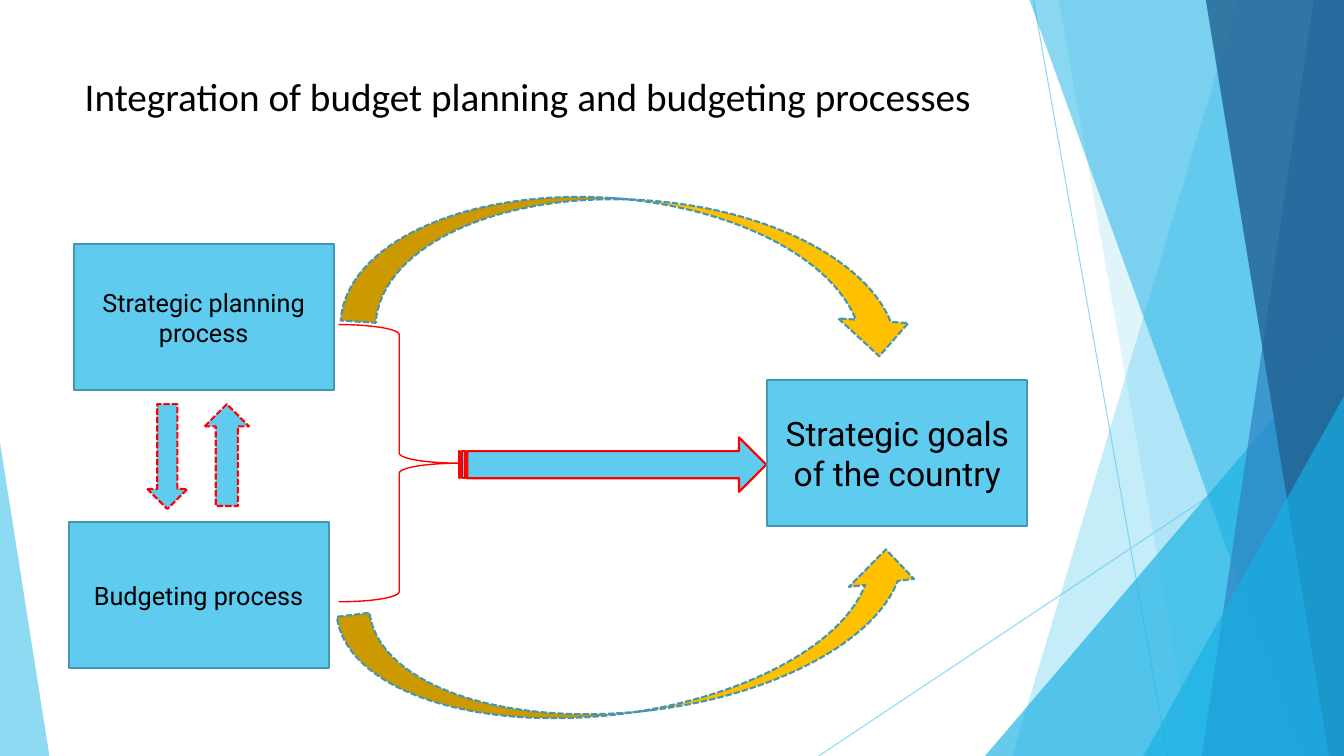
import pptx
import pptx.dml.color
import pptx.enum.dml
import pptx.enum.shapes
import pptx.enum.text
import pptx.oxml
import pptx.oxml.ns
import pptx.util

Inches = pptx.util.Inches
Pt = pptx.util.Pt
RGBColor = pptx.dml.color.RGBColor
PRESET = pptx.enum.shapes.MSO_SHAPE
ALIGN = pptx.enum.text.PP_ALIGN
ANCHOR = pptx.enum.text.MSO_ANCHOR
DASH = pptx.enum.dml.MSO_LINE.SQUARE_DOT

SKY = RGBColor(0x5F, 0xCB, 0xEF)
CYAN = RGBColor(0x17, 0xB0, 0xE4)
BLUE = RGBColor(0x2E, 0x83, 0xC3)
NAVY = RGBColor(0x22, 0x62, 0x92)
TEAL = RGBColor(0x46, 0x96, 0xB1)
RED = RGBColor(0xFF, 0x00, 0x00)
GOLD = RGBColor(0xFF, 0xC0, 0x00)
BLACK = RGBColor(0x00, 0x00, 0x00)

WIDTH, HEIGHT = 13.33, 7.5


def apply(target, formats):
    for name, value in formats.items():
        setattr(target, name, value)


class ProcessSlide:
    def __init__(self, deck):
        self.slide = deck.slides.add_slide(deck.slide_layouts[5])
        self.shapes = self.slide.shapes

    def set_opacity(self, element, percent):
        color = next(element.iter(pptx.oxml.ns.qn("a:srgbClr")))
        color.append(pptx.oxml.parse_xml(
            f'<a:alpha {pptx.oxml.ns.nsdecls("a")} val="{percent * 1000}"/>'))

    def set_text(self, frame, text, font, align, anchor):
        apply(frame, {"text": text, "word_wrap": True, "vertical_anchor": anchor})
        paragraph = frame.paragraphs[0]
        paragraph.alignment = align
        apply(paragraph.runs[0].font, font)
        paragraph.runs[0].font.color.rgb = BLACK

    def title(self, text, left, top, width, height):
        heading = self.shapes.title
        apply(heading, {"left": Inches(left), "top": Inches(top),
                        "width": Inches(width), "height": Inches(height)})
        self.set_text(heading.text_frame, text, {"name": "Calibri", "size": Pt(28)},
                      ALIGN.LEFT, ANCHOR.TOP)

    def ray(self, start, end):
        ray = self.shapes.add_connector(
            pptx.enum.shapes.MSO_CONNECTOR.STRAIGHT,
            *(Inches(value) for value in start + end))
        ray.line.color.rgb = SKY
        ray.line.width = Pt(0.75)
        self.set_opacity(ray.element, 70)
        outline = next(ray.element.iter(pptx.oxml.ns.qn("a:ln")))
        outline.addnext(pptx.oxml.parse_xml(
            f'<a:effectLst {pptx.oxml.ns.nsdecls("a")}/>'))

    def tint(self, facet, color, opacity):
        facet.shadow.inherit = False
        facet.fill.solid()
        facet.fill.fore_color.rgb = color
        self.set_opacity(facet.element, opacity)
        facet.line.fill.background()

    def band(self, top_left, bottom_left, color, opacity):
        outline = self.shapes.build_freeform(Inches(top_left), 0)
        outline.add_line_segments(
            [(Inches(x), Inches(y)) for x, y in
             ((WIDTH, 0), (WIDTH, HEIGHT), (bottom_left, HEIGHT))], close=True)
        self.tint(outline.convert_to_shape(), color, opacity)

    def corner(self, left, top, width, peak, color, opacity):
        corner = self.shapes.add_shape(
            PRESET.ISOSCELES_TRIANGLE, Inches(left), Inches(top),
            Inches(width), Inches(HEIGHT - top))
        corner.adjustments[0] = peak
        self.tint(corner, color, opacity)

    def figure(self, preset, box, fill, line, width=1.5, dash=None, rotation=0):
        figure = self.shapes.add_shape(preset, *(Inches(value) for value in box))
        figure.shadow.inherit = False
        figure.rotation = rotation
        if fill is None:
            figure.fill.background()
        else:
            figure.fill.solid()
            figure.fill.fore_color.rgb = fill
        figure.line.color.rgb = line
        apply(figure.line, {"width": Pt(width), "dash_style": dash})
        return figure

    def process(self, text, left, top, size):
        process = self.figure(PRESET.RECTANGLE, (left, top, 2.58, 1.45), SKY, TEAL)
        self.set_text(process.text_frame, text, {"name": "Roboto", "size": Pt(size)},
                      ALIGN.CENTER, ANCHOR.MIDDLE)


def main():
    deck = pptx.Presentation()
    apply(deck, {"slide_width": Inches(WIDTH), "slide_height": Inches(HEIGHT)})
    page = ProcessSlide(deck)

    page.ray((10.25, 0), (11.58, HEIGHT))
    page.ray((WIDTH, 4.03), (8.12, HEIGHT))
    page.band(12.28, 10.04, SKY, 36)
    page.band(10.5, 11.83, SKY, 20)
    page.corner(9.77, 3.33, 3.56, 1, CYAN, 66)
    page.band(10.21, 12.91, CYAN, 50)
    page.band(13.03, 11.92, BLUE, 70)
    page.band(11.96, 13.18, NAVY, 80)
    page.corner(11.34, 3.93, 1.99, 1, CYAN, 66)
    page.corner(0, 4.39, 0.49, 0, SKY, 70)

    page.title("Integration of budget planning and budgeting processes",
               0.74, 0.67, 10.66, 0.88)
    page.figure(PRESET.STRIPED_RIGHT_ARROW, (4.55, 4.34, 3.05, 0.54), SKY, RED)
    page.process("Strategic planning process", 0.73, 2.42, 18)
    page.process("Budgeting process", 0.68, 5.18, 18)
    page.figure(PRESET.RIGHT_BRACE, (3.36, 3.22, 1.2, 2.75), None, RED, width=1)
    page.process("Strategic goals of the country", 7.61, 3.77, 24)

    for preset, box, fill, line, rotation in (
        (PRESET.DOWN_ARROW, (1.46, 4.01, 0.4, 1.04), SKY, RED, 0),
        (PRESET.UP_ARROW, (2.03, 4.01, 0.44, 1.01), SKY, RED, 0),
        (PRESET.CURVED_DOWN_ARROW, (3.42, 1.98, 5.7, 1.39), GOLD, TEAL, 3.8),
        (PRESET.CURVED_UP_ARROW, (3.4, 5.76, 5.81, 1.3), GOLD, TEAL, 353),
    ):
        page.figure(preset, box, fill, line, dash=DASH, rotation=rotation)

    deck.save("out.pptx")


if __name__ == "__main__":
    main()
